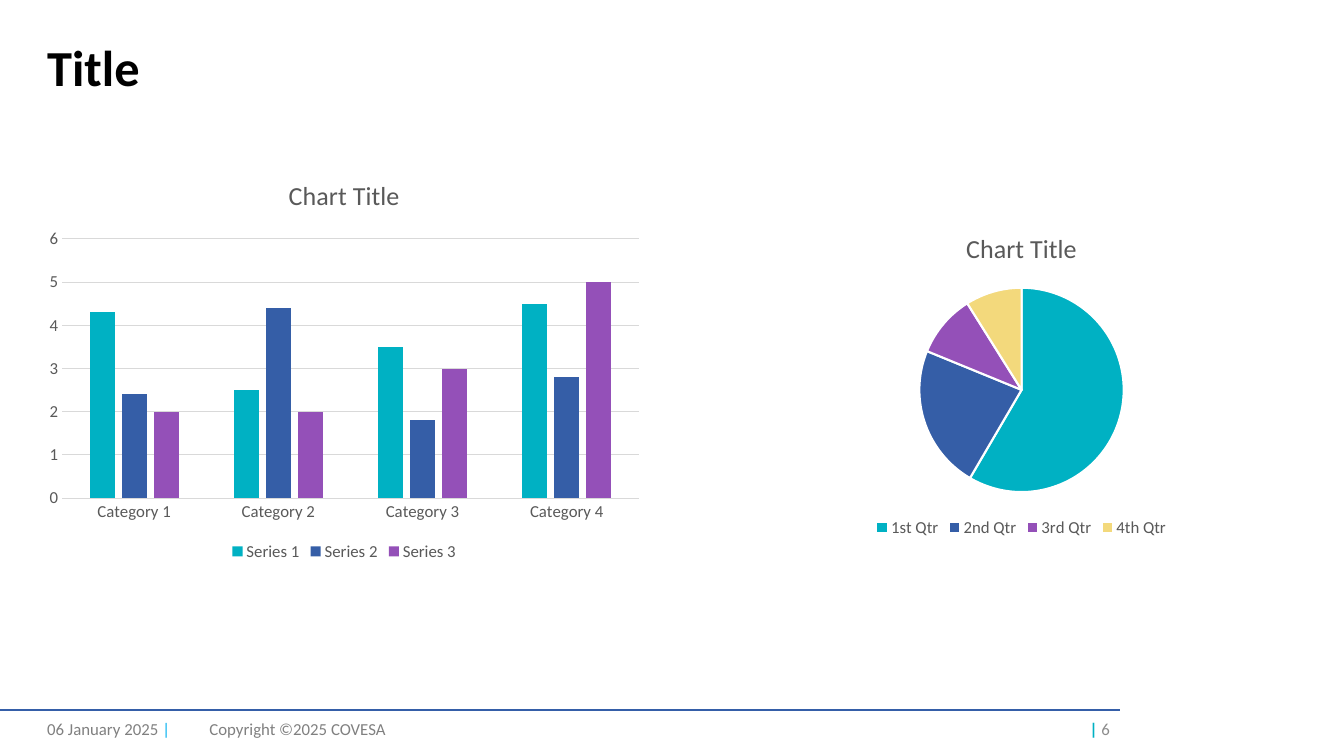
from dataclasses import dataclass

from lxml.etree import SubElement
from pptx import Presentation
from pptx.chart.data import CategoryChartData
from pptx.dml.color import RGBColor
from pptx.enum.chart import XL_CHART_TYPE as ChartType
from pptx.enum.chart import XL_LEGEND_POSITION as LegendPosition
from pptx.enum.chart import XL_TICK_MARK as TickMark
from pptx.enum.shapes import MSO_CONNECTOR as Connector
from pptx.enum.text import MSO_ANCHOR as Anchor
from pptx.enum.text import PP_ALIGN as Align
from pptx.oxml.ns import qn
from pptx.util import Pt


@dataclass(frozen=True)
class Theme:
    font: str = "Calibri"
    black: str = "000000"
    white: str = "FFFFFF"
    rule: str = "355EA8"
    chart_text: str = "595959"
    grid: str = "D9D9D9"
    footer: str = "808080"
    page_number: str = "8C8C8C"
    date_mark: str = "00B0F0"
    accents: tuple = ("00B1C3", "355EA7", "9450B8", "F3D97C")
    title_size: float = 36
    chart_title_size: float = 18.6
    small_size: float = 12


def format_font(font, theme, size, color, bold=False):
    font.name = theme.font
    font.size = Pt(size)
    font.bold = bold
    font.color.rgb = RGBColor.from_string(color)


def add_span(para, text, **style):
    span = para.add_run()
    span.text = text
    format_font(span.font, **style)


def paint(fill, color):
    fill.solid()
    fill.fore_color.rgb = RGBColor.from_string(color)


def draw_line(line, color, width):
    line.color.rgb = RGBColor.from_string(color)
    line.width = Pt(width)


class SlideBuilder:
    def __init__(self, page, theme):
        self.page = page
        self.theme = theme

    def rule(self, left, right, top):
        line = self.page.shapes.add_connector(
            Connector.STRAIGHT, Pt(left), Pt(top), Pt(right), Pt(top))
        draw_line(line.line, self.theme.rule, 1.5)
        SubElement(line._element.spPr, qn("a:effectLst"))

    def text(self, area, spans, size, align=Align.LEFT, spacing=1.0):
        box = self.page.shapes.add_textbox(*map(Pt, area))
        frame = box.text_frame
        frame.word_wrap = True
        frame.vertical_anchor = Anchor.MIDDLE
        para = frame.paragraphs[0]
        para.alignment = align
        para.line_spacing = spacing
        for text, color, bold in spans:
            add_span(para, text, theme=self.theme, size=size, color=color, bold=bold)

    def chart(self, kind, area, categories, series):
        theme = self.theme
        data = CategoryChartData()
        data.categories = categories
        for name, values in series.items():
            data.add_series(name, values)
        chart = self.page.shapes.add_chart(kind, *map(Pt, area), data).chart
        format_font(chart.font, theme, theme.small_size, theme.chart_text)
        chart.has_title = True
        add_span(chart.chart_title.text_frame.paragraphs[0], "Chart Title",
                 theme=theme, size=theme.chart_title_size, color=theme.chart_text)
        chart.chart_title.include_in_layout = False
        chart.has_legend = True
        chart.legend.position = LegendPosition.BOTTOM
        chart.legend.include_in_layout = False
        format_font(chart.legend.font, theme, theme.small_size, theme.chart_text)
        return chart

    def column_chart(self, area, categories, series):
        theme = self.theme
        chart = self.chart(ChartType.COLUMN_CLUSTERED, area, categories, series)
        plot = chart.plots[0]
        plot.vary_by_categories = False
        plot.gap_width = 219
        plot.overlap = -27
        for bars, color in zip(plot.series, theme.accents):
            paint(bars.format.fill, color)
            bars.invert_if_negative = False
        for axis in (chart.category_axis, chart.value_axis):
            axis.major_tick_mark = TickMark.NONE
            axis.minor_tick_mark = TickMark.NONE
            format_font(axis.tick_labels.font, theme, theme.small_size, theme.chart_text)
        draw_line(chart.category_axis.format.line, theme.grid, 0.75)
        values = chart.value_axis
        values.minimum_scale = 0
        values.maximum_scale = 6
        values.major_unit = 1
        values.format.line.fill.background()
        draw_line(values.major_gridlines.format.line, theme.grid, 0.75)

    def pie_chart(self, area, categories, series):
        chart = self.chart(ChartType.PIE, area, categories, series)
        plot = chart.plots[0]
        plot.vary_by_categories = True
        for index, color in enumerate(self.theme.accents):
            slice_format = plot.series[0].points[index].format
            paint(slice_format.fill, color)
            draw_line(slice_format.line, self.theme.white, 1.5)


def main():
    theme = Theme()
    deck = Presentation()
    deck.slide_width = Pt(960)
    deck.slide_height = Pt(540)
    builder = SlideBuilder(deck.slides.add_slide(deck.slide_layouts[6]), theme)
    margin, footer_top, footer_height = 26.64, 506.16, 28.8

    builder.rule(0, 800, 506.88)
    builder.column_chart(
        (margin, 113.76, 438.48, 290.16),
        [f"Category {number}" for number in range(1, 5)],
        {"Series 1": (4.3, 2.5, 3.5, 4.5),
         "Series 2": (2.4, 4.4, 1.8, 2.8),
         "Series 3": (2, 2, 3, 5)})
    builder.pie_chart(
        (552.96, 152.64, 353.52, 234),
        ["1st Qtr", "2nd Qtr", "3rd Qtr", "4th Qtr"],
        {"Series 1": (59, 23, 10, 9)})
    builder.text((margin, 25.92, 761.76, 48.24), [("Title", theme.black, True)],
                 theme.title_size, spacing=0.9)

    footers = [
        (margin, 126.72, Align.LEFT,
         [("06 January 2025 ", theme.footer, False), ("|", theme.date_mark, False)]),
        (142.56, 153.36, Align.LEFT,
         [("Copyright ©2025 COVESA", theme.footer, False)]),
        (583.92, 216, Align.RIGHT,
         [("| ", theme.accents[0], True), ("6", theme.page_number, False)]),
    ]
    for left, width, align, spans in footers:
        builder.text((left, footer_top, width, footer_height), spans,
                     theme.small_size, align)
    deck.save("out.pptx")


if __name__ == "__main__":
    main()
